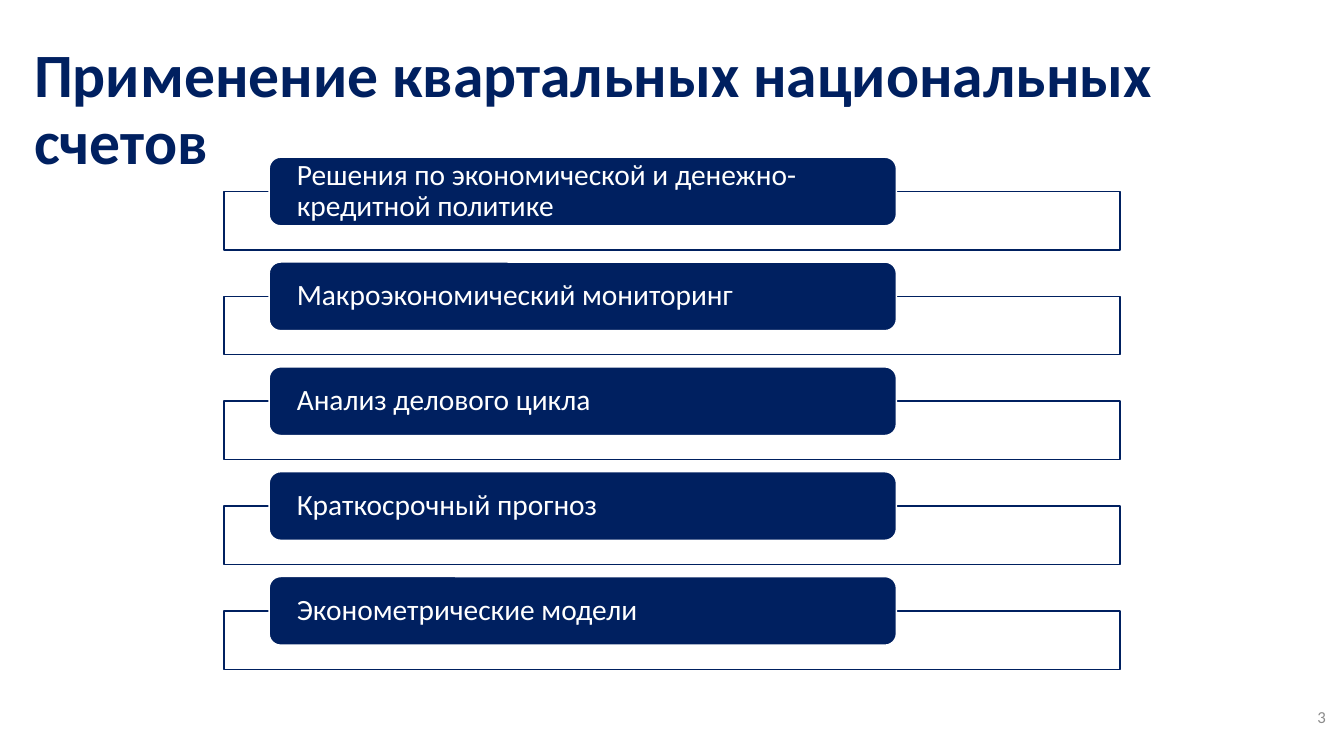
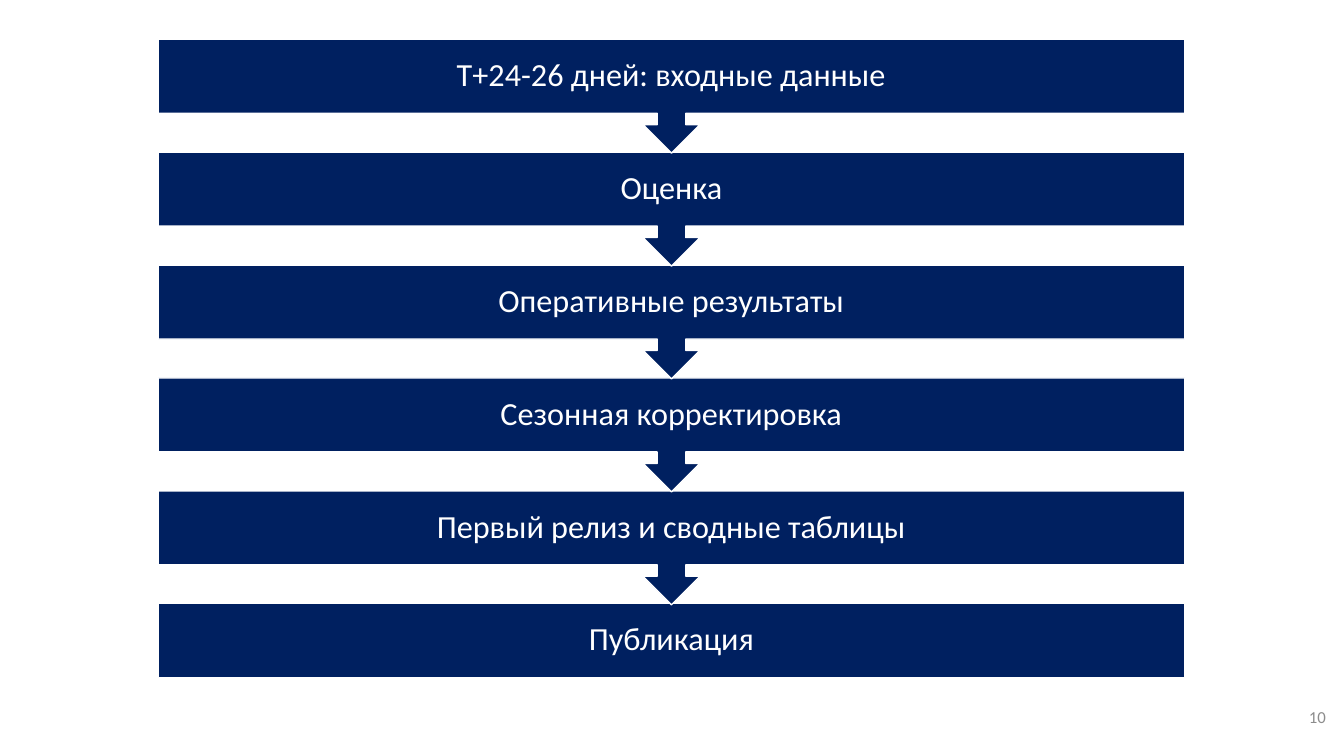
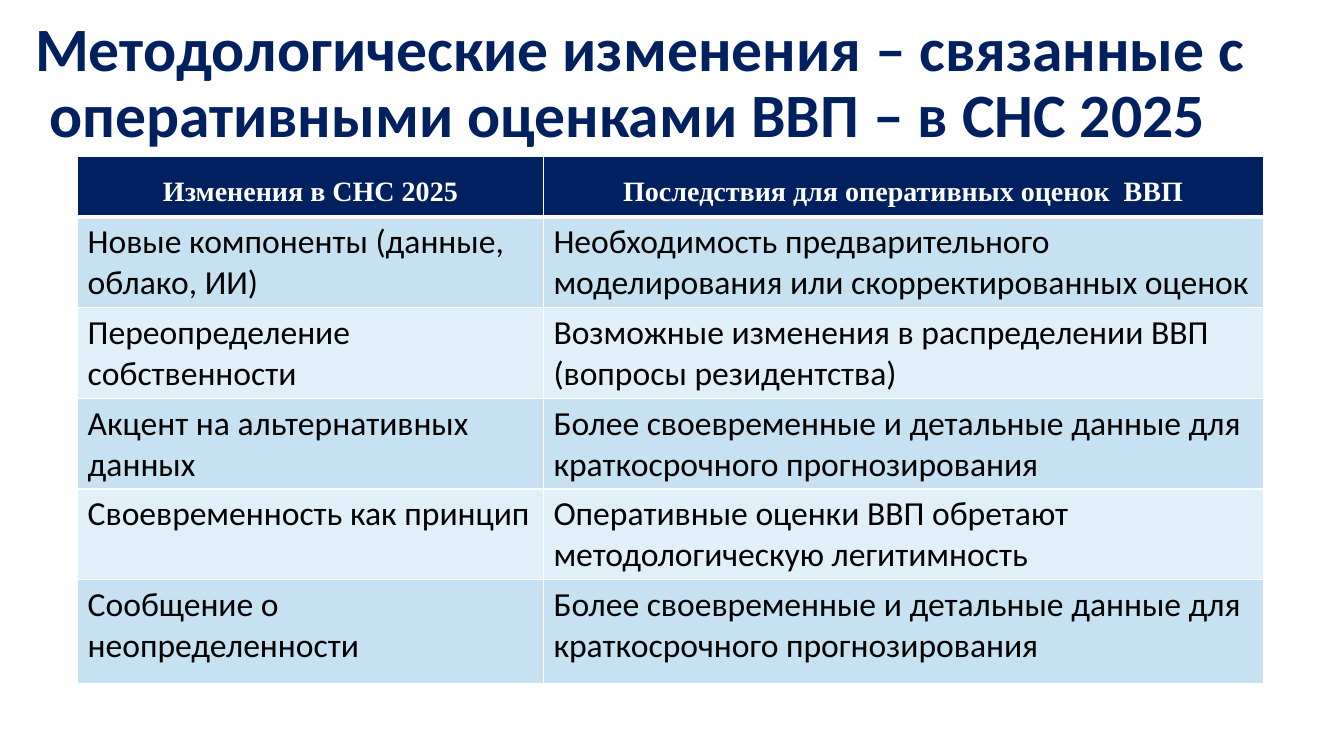
"""Build three slides on quarterly national accounts."""
import pptx
import pptx.dml.color
import pptx.enum.shapes
import pptx.enum.text
import pptx.oxml
import pptx.oxml.ns
import pptx.util

Inches = pptx.util.Inches
Pt = pptx.util.Pt
RGBColor = pptx.dml.color.RGBColor
Shape = pptx.enum.shapes.MSO_SHAPE
Align = pptx.enum.text.PP_ALIGN
Anchor = pptx.enum.text.MSO_ANCHOR

NAVY = RGBColor(0x00, 0x20, 0x60)
WHITE = RGBColor(0xFF, 0xFF, 0xFF)
BLACK = RGBColor(0x00, 0x00, 0x00)
GREY = RGBColor(0x8C, 0x8C, 0x8C)
BANDS = (RGBColor(0xC6, 0xE1, 0xF2), RGBColor(0xE0, 0xEF, 0xF8))

USES_TITLE = "Применение квартальных национальных счетов"
USES = [
    "Решения по экономической и денежно-кредитной политике",
    "Макроэкономический мониторинг",
    "Анализ делового цикла",
    "Краткосрочный прогноз",
    "Эконометрические модели",
]
STEPS = [
    "T+24-26 дней: входные данные",
    "Оценка",
    "Оперативные результаты",
    "Сезонная корректировка",
    "Первый релиз и сводные таблицы",
    "Публикация",
]
CHANGES_TITLE = "Методологические изменения – связанные с  оперативными оценками ВВП – в СНС 2025"
CHANGES = [
    ("Изменения в СНС 2025", "Последствия для оперативных оценок  ВВП"),
    ("Новые компоненты (данные, облако, ИИ)",
     "Необходимость предварительного моделирования или скорректированных оценок"),
    ("Переопределение собственности",
     "Возможные изменения в распределении ВВП (вопросы резидентства)"),
    ("Акцент на альтернативных данных",
     "Более своевременные и детальные данные для краткосрочного прогнозирования"),
    ("Своевременность как принцип",
     "Оперативные оценки ВВП обретают методологическую легитимность"),
    ("Сообщение о неопределенности",
     "Более своевременные и детальные данные для краткосрочного прогнозирования"),
]
COLUMN_WIDTHS = (4.62, 7.14)
ROW_HEIGHTS = (0.5, 0.84, 0.84, 0.77, 0.77, 1.03)


def write(frame, text, size=24, color=BLACK, font="Calibri", bold=False,
          align=Align.LEFT, spacing=1.0):
    """Put one formatted paragraph into a text frame."""
    frame.word_wrap = True
    para = frame.paragraphs[0]
    para.alignment = align
    para.line_spacing = spacing
    span = para.add_run()
    span.text = text
    span.font.name = font
    span.font.size = Pt(size)
    span.font.bold = bold
    span.font.color.rgb = color


def add_text(page, place, text, anchor=Anchor.TOP, **style):
    """Add a text box at a place given in inches."""
    frame = page.shapes.add_textbox(*map(Inches, place)).text_frame
    frame.vertical_anchor = anchor
    write(frame, text, **style)


def add_title(page, place, text):
    """Add a slide title in the shared style."""
    add_text(page, place, text, size=44, color=NAVY, bold=True, spacing=0.9)


def add_number(page, number):
    """Add the slide number at the lower right."""
    add_text(page, (10.25, 6.91, 3, 0.4), str(number), anchor=Anchor.MIDDLE,
             size=12, color=GREY, align=Align.RIGHT)


def add_block(page, kind, place, fill, line):
    """Add a filled and outlined shape without a shadow."""
    block = page.shapes.add_shape(kind, *map(Inches, place))
    block.shadow.inherit = False
    block.fill.solid()
    block.fill.fore_color.rgb = fill
    block.line.color.rgb = line
    block.line.width = Pt(1)
    return block


def label(block, text, inset_x, inset_y, **style):
    """Write white text in the middle of a block."""
    frame = block.text_frame
    frame.margin_left = frame.margin_right = Inches(inset_x)
    frame.margin_top = frame.margin_bottom = Inches(inset_y)
    frame.vertical_anchor = Anchor.MIDDLE
    write(frame, text, color=WHITE, spacing=0.9, **style)


def set_borders(cell, bottom):
    """Give a cell white borders, with a chosen bottom width in points."""
    properties = cell._tc.get_or_add_tcPr()
    for index, (side, width) in enumerate(zip("LRTB", (1, 1, 1, bottom))):
        border = pptx.oxml.parse_xml(
            f'<a:ln{side} {pptx.oxml.ns.nsdecls("a")} w="{Pt(width)}"><a:solidFill>'
            f'<a:srgbClr val="{WHITE}"/></a:solidFill></a:ln{side}>')
        properties.insert(index, border)


def build_uses(page):
    """Draw the list of uses as labelled frames."""
    for index, text in enumerate(USES):
        top = 1.56 + index * 1.04
        add_block(page, Shape.RECTANGLE, (2.22, top + 0.34, 8.89, 0.58), WHITE, NAVY)
        tab = add_block(page, Shape.ROUNDED_RECTANGLE, (2.67, top, 6.22, 0.68), NAVY, WHITE)
        label(tab, text, 0.24, 0, size=21)
    add_title(page, (0.24, 0.39, 11.5, 1.45), USES_TITLE)
    add_number(page, 3)


def build_steps(page):
    """Draw the release process, last step at the back."""
    last = len(STEPS) - 1
    for index in range(last, -1, -1):
        kind, height = ((Shape.RECTANGLE, 0.73) if index == last
                        else (Shape.DOWN_ARROW_CALLOUT, 1.13))
        step = add_block(page, kind, (1.57, 0.39 + index * 1.12, 10.18, height), NAVY, WHITE)
        label(step, STEPS[index], 0.18, 0.18, size=23, align=Align.CENTER)
    add_number(page, 10)


def build_changes(page):
    """Draw the table of methodological changes."""
    place = (0.77, 1.55, sum(COLUMN_WIDTHS), sum(ROW_HEIGHTS))
    table = page.shapes.add_table(len(CHANGES), len(COLUMN_WIDTHS),
                                  *map(Inches, place)).table
    for column, width in zip(table.columns, COLUMN_WIDTHS):
        column.width = Inches(width)
    for row, height in zip(table.rows, ROW_HEIGHTS):
        row.height = Inches(height)
    heading = dict(size=20, color=WHITE, font="Times New Roman", bold=True,
                   align=Align.CENTER, spacing=1.5)
    for row, texts in enumerate(CHANGES):
        for column, text in enumerate(texts):
            cell = table.cell(row, column)
            cell.fill.solid()
            cell.fill.fore_color.rgb = BANDS[(row - 1) % 2] if row else NAVY
            set_borders(cell, bottom=1 if row else 3)
            write(cell.text_frame, text, **({} if row else heading))
    add_title(page, (0.25, 0.13, 12.28, 1.43), CHANGES_TITLE)


def main():
    """Build and save the deck."""
    deck = pptx.Presentation()
    deck.slide_width = Inches(13.33)
    deck.slide_height = Inches(7.5)
    for build in (build_uses, build_steps, build_changes):
        build(deck.slides.add_slide(deck.slide_layouts[6]))
    deck.save("out.pptx")


if __name__ == "__main__":
    main()
